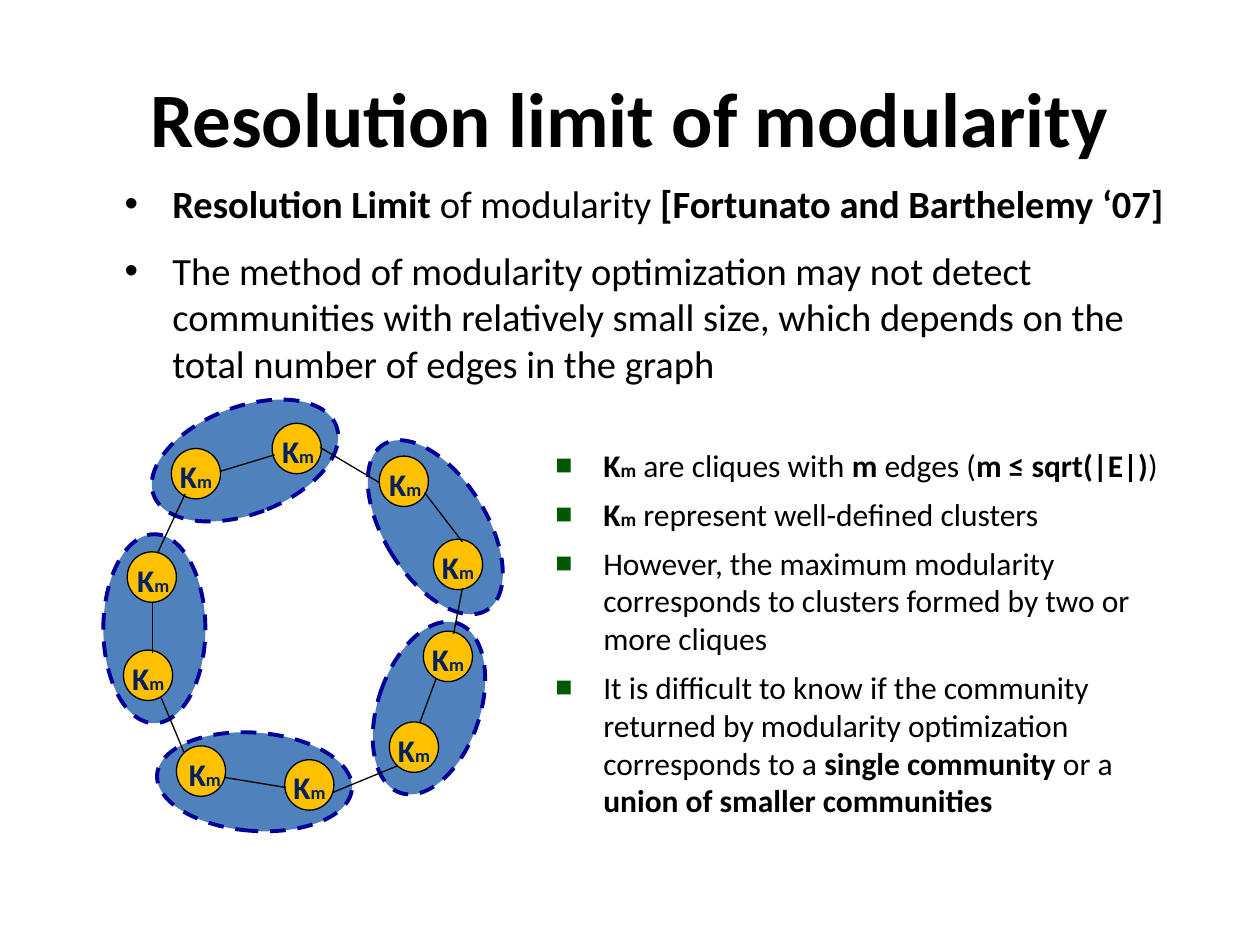
import pptx
import pptx.dml.color
import pptx.enum.dml
import pptx.enum.shapes
import pptx.enum.text
import pptx.oxml
import pptx.oxml.ns
import pptx.util

Inches, Pt = pptx.util.Inches, pptx.util.Pt
WIDTH, HEIGHT = 10, 7.5
FONT = "Calibri"
INK, LABEL_INK = "000000", "002060"

# Runs are (text, bold, size in points)
TITLE = [[("Resolution limit of modularity", True, 44)]]
INTRO = [
    [("Resolution Limit ", True, 22), ("of modularity ", False, 22),
     ("[Fortunato and Barthelemy ‘07]", True, 22)],
    [("The method of modularity optimization may not detect communities with "
      "relatively small size, which depends on the total number of edges in the graph",
      False, 22)],
]
CLIQUE = [("K", True, 18), ("m", True, 11)]
FINDINGS = [
    CLIQUE + [(" are cliques with ", False, 18), ("m ", True, 18), ("edges (", False, 18),
              ("m ≤ sqrt(|E|)", True, 18), (")", False, 18)],
    CLIQUE + [(" represent well-defined clusters", False, 18)],
    [("However, the maximum modularity corresponds to clusters formed by two or "
      "more cliques", False, 18)],
    [("It is difficult to know if the community returned by modularity optimization "
      "corresponds to a ", False, 18), ("single community ", True, 18),
     ("or a ", False, 18), ("union of smaller communities", True, 18)],
]
NODE_LABEL = [[("K", True, 18), ("m", True, 10.5)]]

# left, top, width, height, rotation
CLUSTERS = [
    (3.00, 4.91, 0.81, 1.42, 18.7),
    (1.63, 5.43, 0.78, 1.55, 274.2),
    (0.82, 4.24, 0.81, 1.50, 0),
    (1.52, 2.88, 0.85, 1.55, 249.1),
    (3.05, 3.41, 0.81, 1.55, 327.9),
]
NODE_WIDTH, NODE_HEIGHT = 0.39, 0.4
LABEL_WIDTH, LABEL_HEIGHT = 0.53, 0.37
# left, top, shift of the label from the node's left edge
NODES = [
    (1.01, 4.38, -0.02), (0.98, 5.16, -0.03), (1.40, 5.92, 0), (2.26, 6.03, -0.03),
    (3.09, 5.73, -0.03), (1.36, 3.56, -0.03), (2.16, 3.36, -0.02), (3.01, 3.62, -0.02),
    (3.44, 4.28, -0.03), (3.36, 5.01, -0.03),
]
LABEL_DROP = 0.02
# Clockwise round the ring: x and y of both ends
EDGES = [
    (2.54, 3.55, 3.01, 3.83), (3.37, 3.91, 3.67, 4.30), (3.67, 4.67, 3.60, 5.03),
    (3.46, 5.39, 3.33, 5.74), (2.64, 6.29, 3.15, 6.08), (1.78, 6.17, 2.27, 6.25),
    (1.28, 5.54, 1.46, 5.97), (1.21, 4.78, 1.21, 5.18), (1.25, 4.39, 1.47, 3.92),
    (1.75, 3.74, 2.18, 3.61),
]


def rgb(code):
    return pptx.dml.color.RGBColor.from_string(code)


def add_bullet(paragraph, mark, color=None, percent=None):
    props = paragraph._p.get_or_add_pPr()
    props.set("marL", str(Inches(0.38)))
    props.set("indent", str(-Inches(0.38)))
    children = []
    if color:
        children.append(f'<a:buClr %s><a:srgbClr val="{color}"/></a:buClr>')
    if percent:
        children.append(f'<a:buSzPct %s val="{percent * 1000}"/>')
    children += ['<a:buFont %s typeface="Arial"/>', f'<a:buChar %s char="{mark}"/>']
    for child in children:
        props.append(pptx.oxml.parse_xml(child % pptx.oxml.ns.nsdecls("a")))


def add_text(slide, box, paragraphs, color=INK, bullet=None, space=0, centred=False):
    frame = slide.shapes.add_textbox(*map(Inches, box)).text_frame
    frame.word_wrap = True
    if centred:
        frame.vertical_anchor = pptx.enum.text.MSO_ANCHOR.MIDDLE
    for index, runs in enumerate(paragraphs):
        paragraph = frame.add_paragraph() if index else frame.paragraphs[0]
        paragraph.space_before = Pt(space)
        if centred:
            paragraph.alignment = pptx.enum.text.PP_ALIGN.CENTER
        if bullet:
            add_bullet(paragraph, *bullet)
        for text, bold, size in runs:
            run = paragraph.add_run()
            run.text = text
            run.font.name = FONT
            run.font.size = Pt(size)
            run.font.bold = bold
            run.font.color.rgb = rgb(color)


def add_ellipse(slide, box, fill, line, weight):
    ellipse = slide.shapes.add_shape(
        pptx.enum.shapes.MSO_SHAPE.OVAL, *map(Inches, box))
    ellipse.shadow.inherit = False
    ellipse.fill.solid()
    ellipse.fill.fore_color.rgb = rgb(fill)
    ellipse.line.color.rgb = rgb(line)
    ellipse.line.width = Pt(weight)
    return ellipse


def add_edge(slide, ends):
    edge = slide.shapes.add_connector(
        pptx.enum.shapes.MSO_CONNECTOR.STRAIGHT, *map(Inches, ends))
    edge.line.color.rgb = rgb(INK)
    edge.line.width = Pt(0.75)
    edge._element.spPr.append(
        pptx.oxml.parse_xml("<a:effectLst %s/>" % pptx.oxml.ns.nsdecls("a")))


def main():
    deck = pptx.Presentation()
    deck.slide_width, deck.slide_height = Inches(WIDTH), Inches(HEIGHT)
    slide = deck.slides.add_slide(deck.slide_layouts[6])

    for *box, rotation in CLUSTERS:
        cluster = add_ellipse(slide, box, "4F81BD", "000099", 2.25)
        cluster.rotation = rotation
        cluster.line.dash_style = pptx.enum.dml.MSO_LINE.DASH

    add_text(slide, (0.05 * WIDTH, 0.04 * HEIGHT, 0.9 * WIDTH, 1.25), TITLE, centred=True)
    add_text(slide, (0.89, 1.38, 8.49, 5.75), INTRO, bullet=("•",), space=12)

    for left, top, shift in NODES:
        add_ellipse(slide, (left, top, NODE_WIDTH, NODE_HEIGHT), "FFC000", INK, 0.75)
        add_text(slide, (left + shift, top + LABEL_DROP, LABEL_WIDTH, LABEL_HEIGHT),
                 NODE_LABEL, LABEL_INK)
    for ends in EDGES:
        add_edge(slide, ends)

    add_text(slide, (4.31, 3.49, 5.25, 3.21), FINDINGS,
             bullet=("■", "005800", 90), space=6.3)
    deck.save("out.pptx")


if __name__ == "__main__":
    main()
